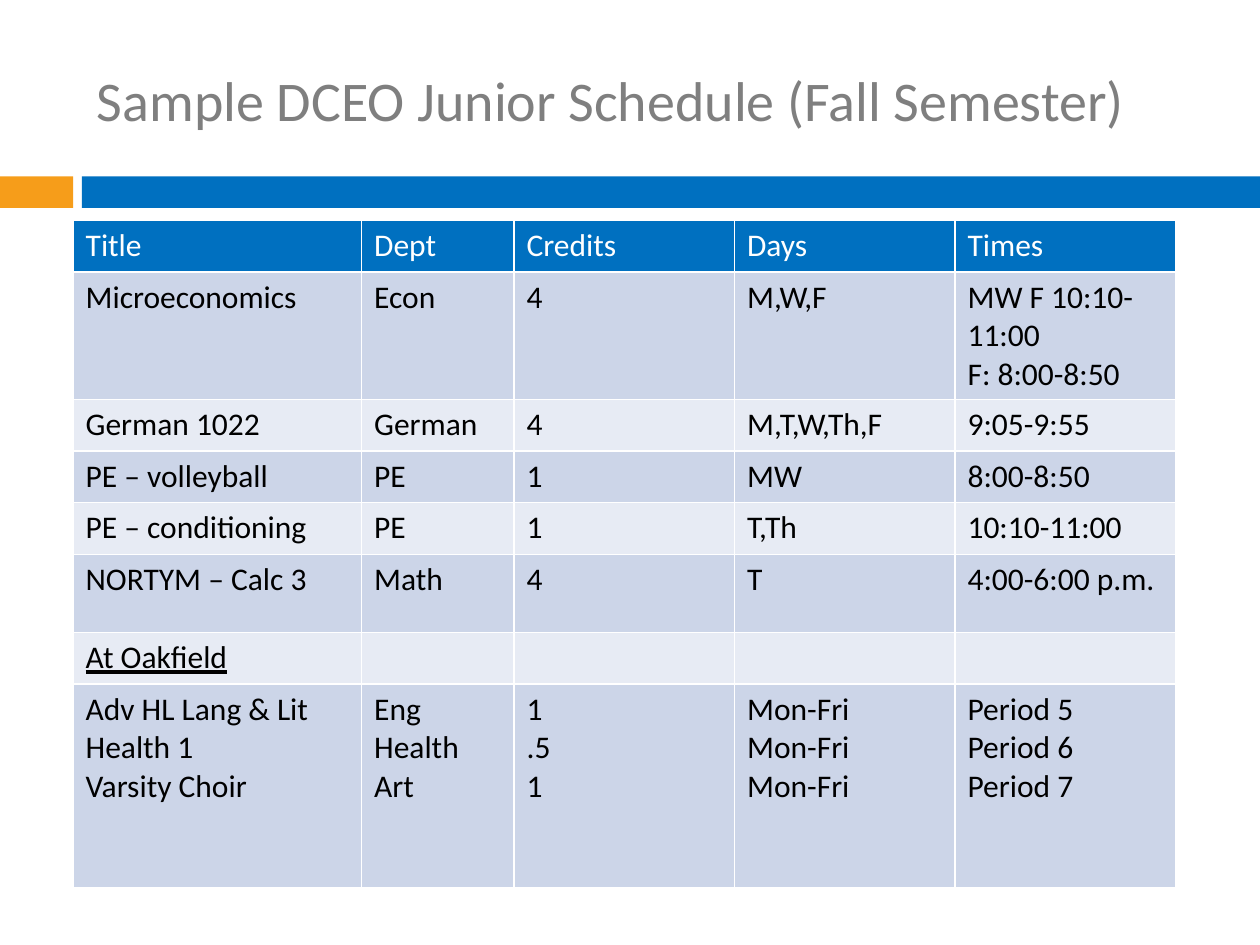
from lxml.etree import SubElement
from pptx import Presentation
from pptx.dml.color import RGBColor
from pptx.enum.shapes import MSO_SHAPE
from pptx.enum.text import MSO_ANCHOR
from pptx.oxml.ns import qn
from pptx.util import Inches, Pt

FONT = "Calibri"
COLORS = {
    "orange": "F69D1A", "blue": "0070C0", "title": "7F7F7F", "white": "FFFFFF",
    "black": "000000", "band_dark": "CCD5E8", "band_light": "E7EBF4",
}
TITLE = "Sample DCEO Junior Schedule (Fall Semester)"
SUBHEADING = "At Oakfield"
# Each line break starts a new paragraph in the cell.
SCHEDULE = [
    ("Title", "Dept", "Credits", "Days", "Times"),
    ("Microeconomics", "Econ", "4", "M,W,F", "MW F 10:10-11:00\nF: 8:00-8:50"),
    ("German 1022", "German", "4", "M,T,W,Th,F", "9:05-9:55"),
    ("PE – volleyball", "PE", "1", "MW", "8:00-8:50"),
    ("PE – conditioning", "PE", "1", "T,Th", "10:10-11:00"),
    ("NORTYM – Calc 3", "Math", "4", "T", "4:00-6:00 p.m."),
    (SUBHEADING, "", "", "", ""),
    ("Adv HL Lang & Lit\nHealth 1\nVarsity Choir", "Eng\nHealth\nArt", "1\n.5\n1",
     "Mon-Fri\nMon-Fri\nMon-Fri", "Period 5\nPeriod 6\nPeriod 7"),
]
COL_WIDTHS = [2.29, 1.21, 1.75, 1.75, 1.75]
ROW_HEIGHTS = [0.41, 1.01, 0.41, 0.41, 0.41, 0.62, 0.41, 1.62]
BARS = [(0, 0.58, "orange"), (0.65, 9.35, "blue")]  # left, width, colour


def rgb(name):
    return RGBColor.from_string(COLORS[name])


def style_paragraph(p, size, color):
    p.font.name = FONT
    p.font.size = Pt(size)
    p.font.bold = False
    p.font.color.rgb = rgb(color)


def add_borders(cell, color, width):
    tc_pr = cell._tc.get_or_add_tcPr()
    for side in ("lnL", "lnR", "lnT", "lnB"):
        ln = SubElement(tc_pr, qn(f"a:{side}"), w=str(Pt(width)))
        fill = SubElement(ln, qn("a:solidFill"))
        SubElement(fill, qn("a:srgbClr"), val=COLORS[color])


def add_bars(slide):
    for left, width, color in BARS:
        s = slide.shapes.add_shape(MSO_SHAPE.RECTANGLE, Inches(left), Inches(1.4),
                                   Inches(width), Inches(0.25))
        s.shadow.inherit = False
        s.fill.solid()
        s.fill.fore_color.rgb = rgb(color)
        s.line.fill.background()


def add_title(slide):
    box = slide.shapes.add_textbox(Inches(0.67), Inches(0.25), Inches(8.92), Inches(1.08))
    tf = box.text_frame
    tf.word_wrap = True
    tf.vertical_anchor = MSO_ANCHOR.MIDDLE
    tf.text = TITLE
    style_paragraph(tf.paragraphs[0], 32, "title")


def add_schedule(slide):
    table = slide.shapes.add_table(
        len(SCHEDULE), len(COL_WIDTHS), Inches(0.58), Inches(1.75),
        Inches(sum(COL_WIDTHS)), Inches(sum(ROW_HEIGHTS))).table
    for column, width in zip(table.columns, COL_WIDTHS):
        column.width = Inches(width)
    for i, (row, height, texts) in enumerate(zip(table.rows, ROW_HEIGHTS, SCHEDULE)):
        row.height = Inches(height)
        band = "blue" if i == 0 else "band_dark" if i % 2 else "band_light"
        for cell, text in zip(row.cells, texts):
            add_borders(cell, "white", 1)
            cell.fill.solid()
            cell.fill.fore_color.rgb = rgb(band)
            cell.text = text
            for p in cell.text_frame.paragraphs:
                style_paragraph(p, 18, "white" if i == 0 else "black")
                if text == SUBHEADING:
                    p.runs[0].font.underline = True


def main():
    prs = Presentation()
    prs.slide_width, prs.slide_height = Inches(10), Inches(7.5)
    slide = prs.slides.add_slide(prs.slide_layouts[6])
    add_bars(slide)
    add_title(slide)
    add_schedule(slide)
    prs.save("out.pptx")


if __name__ == "__main__":
    main()
